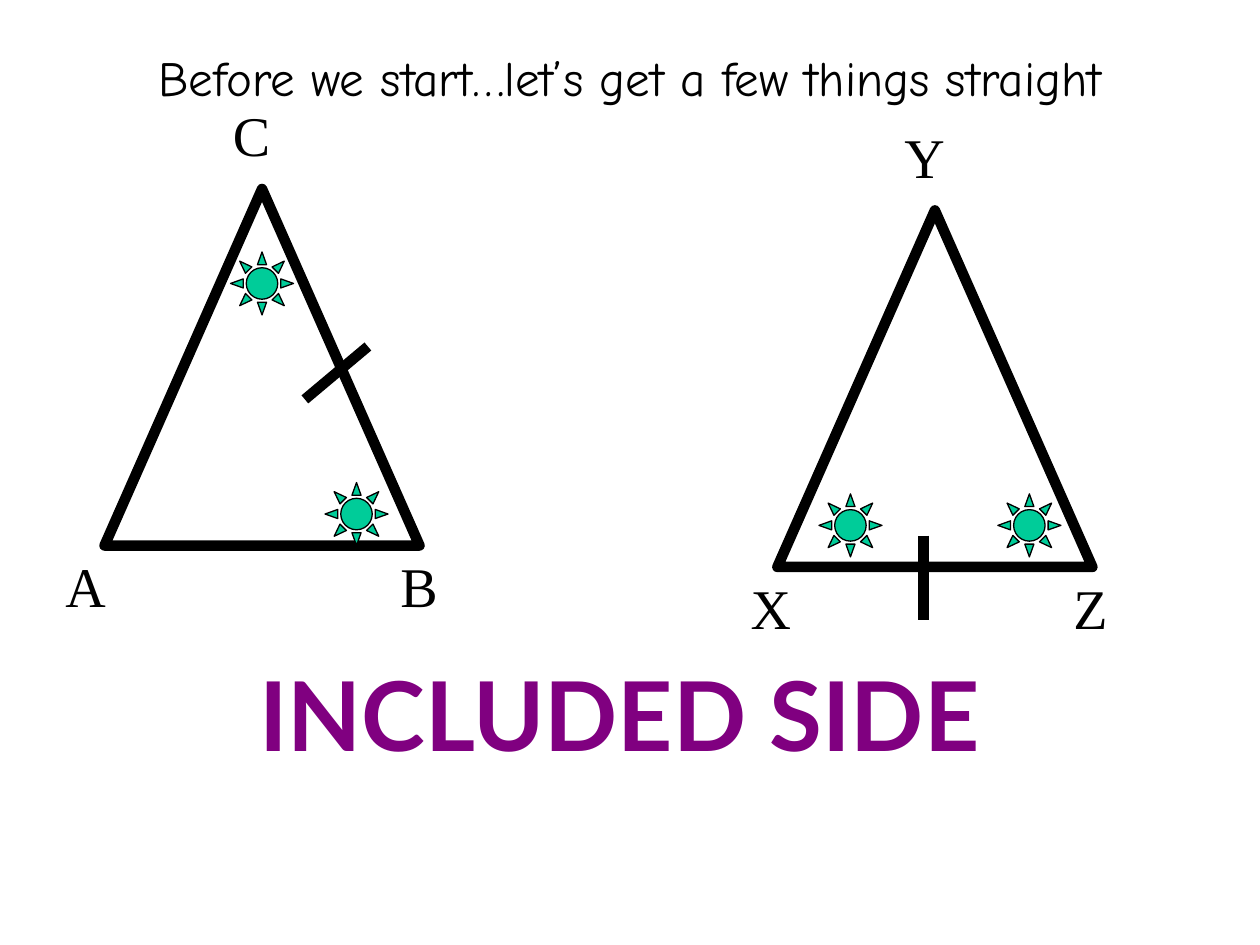
from pptx import Presentation
from pptx.dml.color import RGBColor
from pptx.enum import shapes, text
from pptx.oxml.ns import qn
from pptx.util import Inches, Pt

BLACK = RGBColor(0x00, 0x00, 0x00)
PURPLE = RGBColor(0x80, 0x00, 0x80)
GREEN = RGBColor(0x00, 0xCC, 0x99)

prs = Presentation()
prs.slide_width, prs.slide_height = Inches(10), Inches(7.5)
slide = prs.slides.add_slide(prs.slide_layouts[6])


def add_text(parent, words, left, top, width, height, font_name, size, color=BLACK):
    box = parent.add_textbox(Inches(left), Inches(top), Inches(width), Inches(height))
    box.text_frame.word_wrap = True
    paragraph = box.text_frame.paragraphs[0]
    paragraph.text = words
    font = paragraph.runs[0].font
    font.name, font.size, font.color.rgb = font_name, Pt(size), color
    return paragraph


def add_outlined(parent, kind, left, top, width, height, line_width):
    shape = parent.add_shape(kind, Inches(left), Inches(top), Inches(width), Inches(height))
    shape.shadow.inherit = False
    shape.fill.background()
    shape.line.color.rgb, shape.line.width = BLACK, Pt(line_width)
    return shape


heading = add_text(slide.shapes, "Before we start…let’s get a few things straight",
                   0, 0.33, 10, 0.57, "Comic Neue", 28)
heading.alignment = text.PP_ALIGN.CENTER

term = add_text(slide.shapes, "INCLUDED SIDE", 0.75, 5.15, 8.33, 1.02, "Lato", 55, PURPLE)
term.alignment = text.PP_ALIGN.CENTER
term.runs[0].font.bold = True

# Triangle corner, vertex labels with offsets, and the corners of the marked angles
triangles = [
    (0.83, 1.5, [("A", -0.41, 2.83), ("B", 2.25, 2.83), ("C", 0.92, -0.75)],
     [(2.58, 3.83), (1.83, 2)]),
    (6.17, 1.67, [("X", -0.31, 2.83), ("Z", 2.25, 2.83), ("Y", 0.91, -0.75)],
     [(6.5, 3.92), (7.92, 3.92)]),
]
for left, top, vertices, angles in triangles:
    group = slide.shapes.add_group_shape().shapes
    add_outlined(group, shapes.MSO_SHAPE.ISOSCELES_TRIANGLE, left, top, 2.5, 2.83, 6)
    for letter, dx, dy in vertices:
        add_text(group, letter, left + dx, top + dy, 1.08, 0.63, "Times New Roman", 32)
    for angle_left, angle_top in angles:
        sun = add_outlined(group, shapes.MSO_SHAPE.SUN, angle_left, angle_top, 0.5, 0.5, 0.75)
        sun.fill.solid()
        sun.fill.fore_color.rgb = GREEN

included_sides = [(2.92, 2.75, 2.42, 3.17), (7.33, 4.25, 7.33, 4.92)]
for ends in included_sides:
    tick = slide.shapes.add_connector(shapes.MSO_CONNECTOR.STRAIGHT, *map(Inches, ends))
    tick.line.color.rgb, tick.line.width = BLACK, Pt(6)
    properties = tick._element.spPr
    properties.append(properties.makeelement(qn("a:effectLst"), {}))

prs.save("out.pptx")
